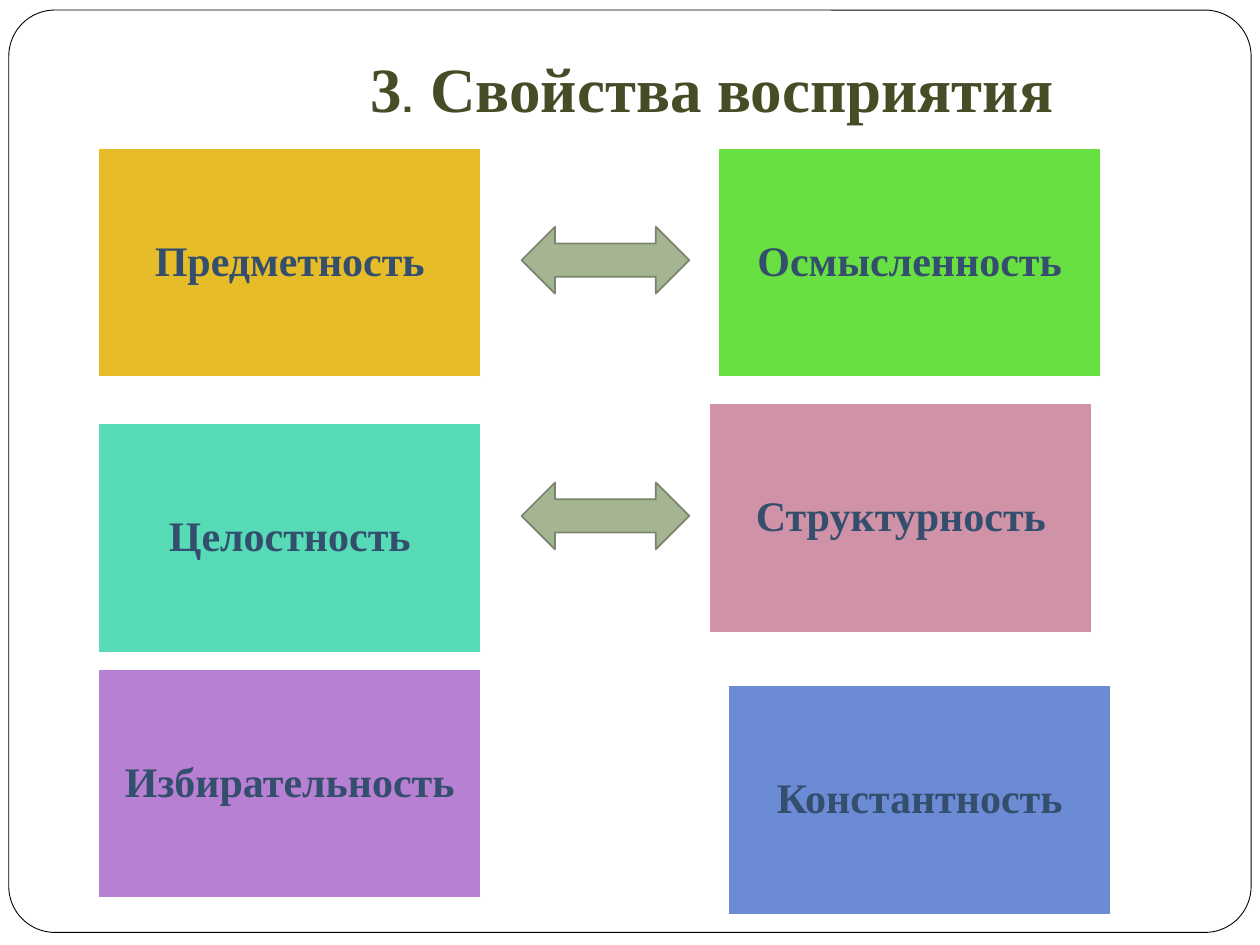
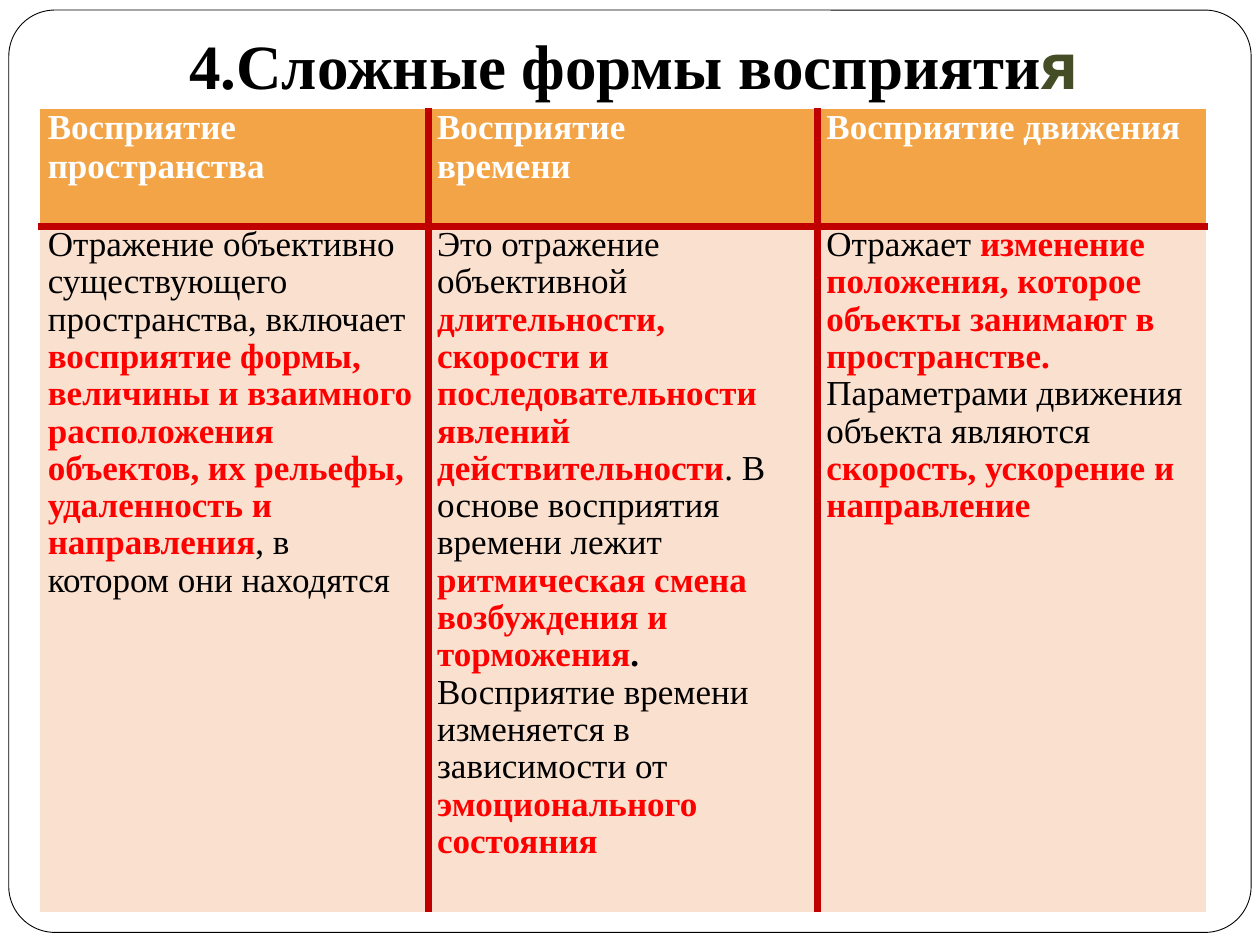
from dataclasses import dataclass
from functools import partial
from typing import NamedTuple

from lxml.etree import SubElement
from pptx import Presentation
from pptx.dml.color import RGBColor as Rgb
from pptx.enum.shapes import MSO_SHAPE as Kind
from pptx.enum.text import MSO_ANCHOR as Anchor, PP_ALIGN as Align
from pptx.oxml.ns import qn
from pptx.util import Emu, Inches, Pt


@dataclass(frozen=True)
class Theme:
    """Colours, fonts and type sizes of the deck."""
    white: str = "FFFFFF"
    black: str = "000000"
    olive: str = "444D26"
    navy: str = "344E6D"
    sage: str = "A5B592"
    moss: str = "7A866C"
    red: str = "FF0000"
    rule: str = "C00000"
    head: str = "F3A447"
    body: str = "FAE0CF"
    serif: str = "Times New Roman"
    sans: str = "Cabin"
    title: int = 36
    label: int = 24
    cell: int = 20
    tight: float = 0.96
    thin: float = 1
    thick: float = 4.5


class Box(NamedTuple):
    """A place in grid columns and rows."""
    left: float
    top: float
    width: float
    height: float


class Card(NamedTuple):
    """A coloured card with its corner on the grid."""
    name: str
    left: float
    top: float
    fill: str


class Run(NamedTuple):
    """A stretch of text with its own look."""
    text: str
    color: str
    bold: bool = True
    font: str = Theme.serif


LOOK = Theme()
WIDE, HIGH = Inches(10), Inches(7.5)
COLS, ROWS = 100, 75
FRAME = Box(0.7, 0.8, 98.6, 73.2)
CARD_W, CARD_H = 30.4, 18.2
LEFT = 7.8
CARDS = (
    Card("Предметность", LEFT, 11.75, "E7BC29"),
    Card("Осмысленность", 57, 11.75, "68E041"),
    Card("Целостность", LEFT, 33.6, "57DAB6"),
    Card("Константность", 57.8, 54.4, "6C8BD5"),
    Card("Избирательность", LEFT, 53.1, "B880D2"),
    Card("Структурность", 56.3, 32, "D092A7"),
)
ARROWS = tuple(Box(41.4, top, 13.3, 5.3) for top in (18, 38.3))
TABLE = Box(3.1, 8.6, 92.7, 62.4)
HEAD_H = 9.4

white = partial(Run, color=LOOK.white)
plain = partial(Run, color=LOOK.black, bold=False)
loud = partial(Run, color=LOOK.red)
olive = partial(Run, color=LOOK.olive)

CELLS = (
    (
        [[white("Восприятие пространства")]],
        [[white("Восприятие")], [white("времени")]],
        [[white("Восприятие движения")]],
    ),
    (
        [[plain("Отражение объективно существующего пространства, включает "),
          loud("восприятие формы, величины и взаимного расположения объектов, "
               "их рельефы, удаленность и направления"),
          plain(", в котором они находятся")]],
        [[plain("Это отражение объективной "),
          loud("длительности, скорости и последовательности явлений "
               "действительности"),
          plain(". В основе восприятия времени лежит "),
          loud("ритмическая смена возбуждения и торможения"),
          plain(". ", bold=True),
          plain("Восприятие времени изменяется в зависимости от "),
          loud("эмоционального состояния")]],
        [[plain("Отражает "),
          loud("изменение положения, которое объекты занимают в пространстве. "),
          plain("Параметрами движения объекта являются "),
          loud("скорость, ускорение и направление")]],
    ),
)


def across(cols: float) -> Emu:
    """Turn grid columns into a length."""
    return Emu(round(WIDE * cols / COLS))


def down(rows: float) -> Emu:
    """Turn grid rows into a length."""
    return Emu(round(HIGH * rows / ROWS))


def place(box: Box) -> tuple:
    """Turn a grid box into slide lengths."""
    return across(box.left), down(box.top), across(box.width), down(box.height)


def write(frame, paras: list, *, size: float, align=Align.LEFT,
          anchor=None, space: float = 1, pad=None, indent: float = 0) -> None:
    """Fill a text frame with paragraphs of runs."""
    if anchor is not None:
        frame.word_wrap = True
        frame.vertical_anchor = anchor
    if pad:
        (frame.margin_left, frame.margin_top,
         frame.margin_right, frame.margin_bottom) = map(Inches, pad)
    for spot, runs in enumerate(paras):
        para = frame.add_paragraph() if spot else frame.paragraphs[0]
        para.alignment = align
        if space != 1:
            para.line_spacing = space
        if indent:
            para._p.get_or_add_pPr().set("marL", str(across(indent)))
        for item in runs:
            run = para.add_run()
            run.text = item.text
            font = run.font
            font.name, font.size, font.bold = item.font, Pt(size), item.bold
            font.color.rgb = Rgb.from_string(item.color)


def draw(slide, kind, box: Box, fill: str, line: str, width: float):
    """Add a flat shape with a fill and an outline."""
    shape = slide.shapes.add_shape(kind, *place(box))
    shape.shadow.inherit = False
    shape.fill.solid()
    shape.fill.fore_color.rgb = Rgb.from_string(fill)
    shape.line.color.rgb = Rgb.from_string(line)
    shape.line.width = Pt(width)
    return shape


def start(deck):
    """Add a blank slide with the rounded frame."""
    slide = deck.slides.add_slide(deck.slide_layouts[6])
    frame = draw(slide, Kind.ROUNDED_RECTANGLE, FRAME, LOOK.white, LOOK.black, 0.5)
    frame.adjustments[0] = 0.05
    return slide


def head(slide, box: Box, runs: list, base: float = 0.1, **form) -> None:
    """Add a slide title that stands on its base."""
    frame = slide.shapes.add_textbox(*place(box)).text_frame
    write(frame, [runs], size=LOOK.title, anchor=Anchor.BOTTOM,
          pad=(0.1, 0, 0.1, base), **form)


def edge(cell, side: str, inner: bool) -> None:
    """Draw one border of a cell."""
    width, color = (LOOK.thick, LOOK.rule) if inner else (LOOK.thin, LOOK.white)
    line = SubElement(cell._tc.get_or_add_tcPr(), qn(f"a:ln{side}"), w=str(Pt(width)))
    SubElement(SubElement(line, qn("a:solidFill")), qn("a:srgbClr"), val=color)


def grid(slide) -> None:
    """Add the table of complex forms."""
    rows, cols = len(CELLS), len(CELLS[0])
    table = slide.shapes.add_table(rows, cols, *place(TABLE)).table
    table.horz_banding = False
    for col in table.columns:
        col.width = across(TABLE.width / cols)
    for row, high in zip(table.rows, (HEAD_H, TABLE.height - HEAD_H)):
        row.height = down(high)
    for y, line in enumerate(CELLS):
        for x, paras in enumerate(line):
            cell = table.cell(y, x)
            write(cell.text_frame, paras, size=LOOK.cell,
                  space=LOOK.tight if y else 1)
            cell.margin_left = cell.margin_right = Inches(0.07)
            cell.margin_top = cell.margin_bottom = 0
            sides = {"L": x > 0, "R": x < cols - 1, "T": y > 0, "B": y < rows - 1}
            for side, inner in sides.items():
                edge(cell, side, inner)
            cell.fill.solid()
            cell.fill.fore_color.rgb = Rgb.from_string(LOOK.body if y else LOOK.head)


def traits(deck) -> None:
    """Build the slide of six properties."""
    slide = start(deck)
    head(slide, Box(10.9, 3, 84.1, 7.9),
         [olive("3"), olive(".", bold=False, font=LOOK.sans),
          olive(" Свойства восприятия")], indent=17.5)
    for card in CARDS:
        box = Box(card.left, card.top, CARD_W, CARD_H)
        shape = draw(slide, Kind.RECTANGLE, box, card.fill, LOOK.white, LOOK.thin)
        write(shape.text_frame, [[Run(card.name, LOOK.navy)]], size=LOOK.label,
              align=Align.CENTER, anchor=Anchor.MIDDLE, space=0.9, pad=(0.1,) * 4)
    for box in ARROWS:
        draw(slide, Kind.LEFT_RIGHT_ARROW, box, LOOK.sage, LOOK.moss, LOOK.thin)


def forms(deck) -> None:
    """Build the slide of complex forms."""
    slide = start(deck)
    head(slide, Box(7.8, 2.3, 85, 12.5),
         [Run("4.Сложные формы восприяти", LOOK.black), olive("я", font=LOOK.sans)],
         base=0.74, align=Align.CENTER)
    grid(slide)


def main() -> None:
    """Build and save the deck."""
    deck = Presentation()
    deck.slide_width, deck.slide_height = WIDE, HIGH
    traits(deck)
    forms(deck)
    deck.save("out.pptx")


if __name__ == "__main__":
    main()
